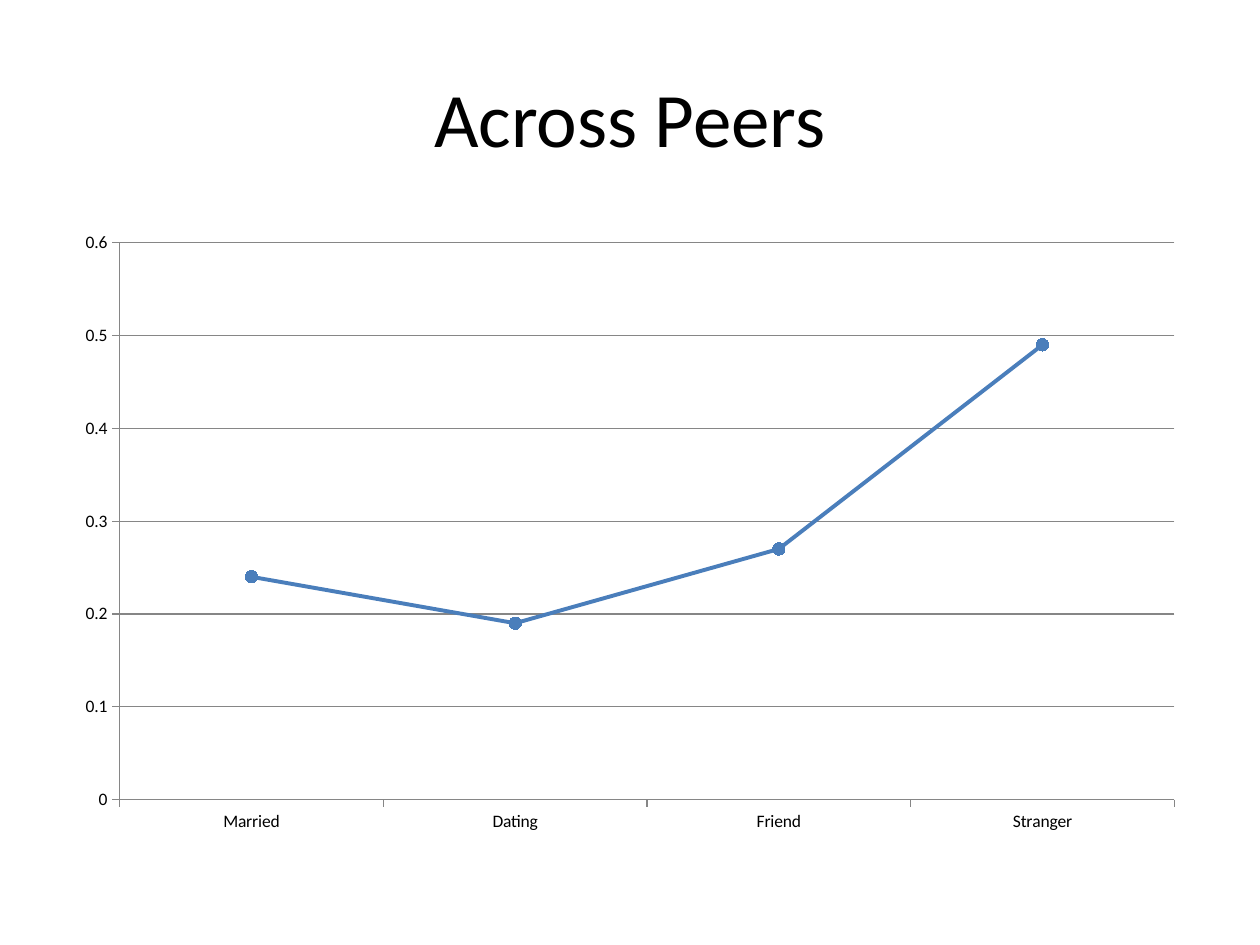
import pptx
import pptx.chart.data
import pptx.dml.color
import pptx.enum.chart
import pptx.enum.text
import pptx.util

Pt = pptx.util.Pt
BLACK = pptx.dml.color.RGBColor(0x00, 0x00, 0x00)
GRAY = pptx.dml.color.RGBColor(0x86, 0x86, 0x86)
BLUE = pptx.dml.color.RGBColor(0x4A, 0x7E, 0xBB)
MARKER_BLUE = pptx.dml.color.RGBColor(0x4F, 0x81, 0xBD)
FONT = "Calibri"
PEER_VALUES = {"Married": 0.24, "Dating": 0.19, "Friend": 0.27, "Stranger": 0.49}


def set_font(font, size):
    """Give a font the deck's typeface and colour at the given size."""
    font.name = FONT
    font.size = Pt(size)
    font.color.rgb = BLACK


def place_title(page, text, left, top, width, height):
    """Place and format the title placeholder."""
    title = page.shapes.title
    title.left, title.top = Pt(left), Pt(top)
    title.width, title.height = Pt(width), Pt(height)
    frame = title.text_frame
    frame.text = text
    frame.vertical_anchor = pptx.enum.text.MSO_ANCHOR.MIDDLE
    para = frame.paragraphs[0]
    para.alignment = pptx.enum.text.PP_ALIGN.CENTER
    set_font(para.runs[0].font, 44)


def format_axis(axis):
    """Draw a thin gray axis with outward ticks."""
    axis.major_tick_mark = pptx.enum.chart.XL_TICK_MARK.OUTSIDE
    axis.minor_tick_mark = pptx.enum.chart.XL_TICK_MARK.NONE
    axis.format.line.color.rgb = GRAY
    axis.format.line.width = Pt(0.75)


def place_line_chart(page, values, left, top, width, height):
    """Place a line chart of one series with round markers."""
    data = pptx.chart.data.CategoryChartData()
    data.categories = list(values)
    data.add_series("Series 1", list(values.values()))
    chart = page.shapes.add_chart(
        pptx.enum.chart.XL_CHART_TYPE.LINE_MARKERS,
        Pt(left), Pt(top), Pt(width), Pt(height), data,
    ).chart
    chart.has_title = False
    chart.has_legend = False
    set_font(chart.font, 10)
    chart.plots[0].vary_by_categories = False

    format_axis(chart.category_axis)
    value_axis = chart.value_axis
    format_axis(value_axis)
    value_axis.minimum_scale = 0
    value_axis.maximum_scale = 0.6
    value_axis.major_unit = 0.1
    value_axis.has_major_gridlines = True
    gridline = value_axis.major_gridlines.format.line
    gridline.color.rgb = GRAY
    gridline.width = Pt(0.75)

    series = chart.plots[0].series[0]
    series.smooth = False
    series.format.line.color.rgb = BLUE
    series.format.line.width = Pt(2.25)
    marker = series.marker
    marker.style = pptx.enum.chart.XL_MARKER_STYLE.CIRCLE
    marker.size = 7
    marker.format.fill.solid()
    marker.format.fill.fore_color.rgb = MARKER_BLUE
    marker.format.line.fill.background()


def main():
    """Build the deck and save it."""
    deck = pptx.Presentation()
    deck.slide_width, deck.slide_height = Pt(720), Pt(540)
    page = deck.slides.add_slide(deck.slide_layouts.get_by_name("Title Only"))
    place_title(page, "Across Peers", 36, 21.6, 648, 90)
    place_line_chart(page, PEER_VALUES, 36, 126, 648, 356.4)
    deck.save("out.pptx")


if __name__ == "__main__":
    main()
